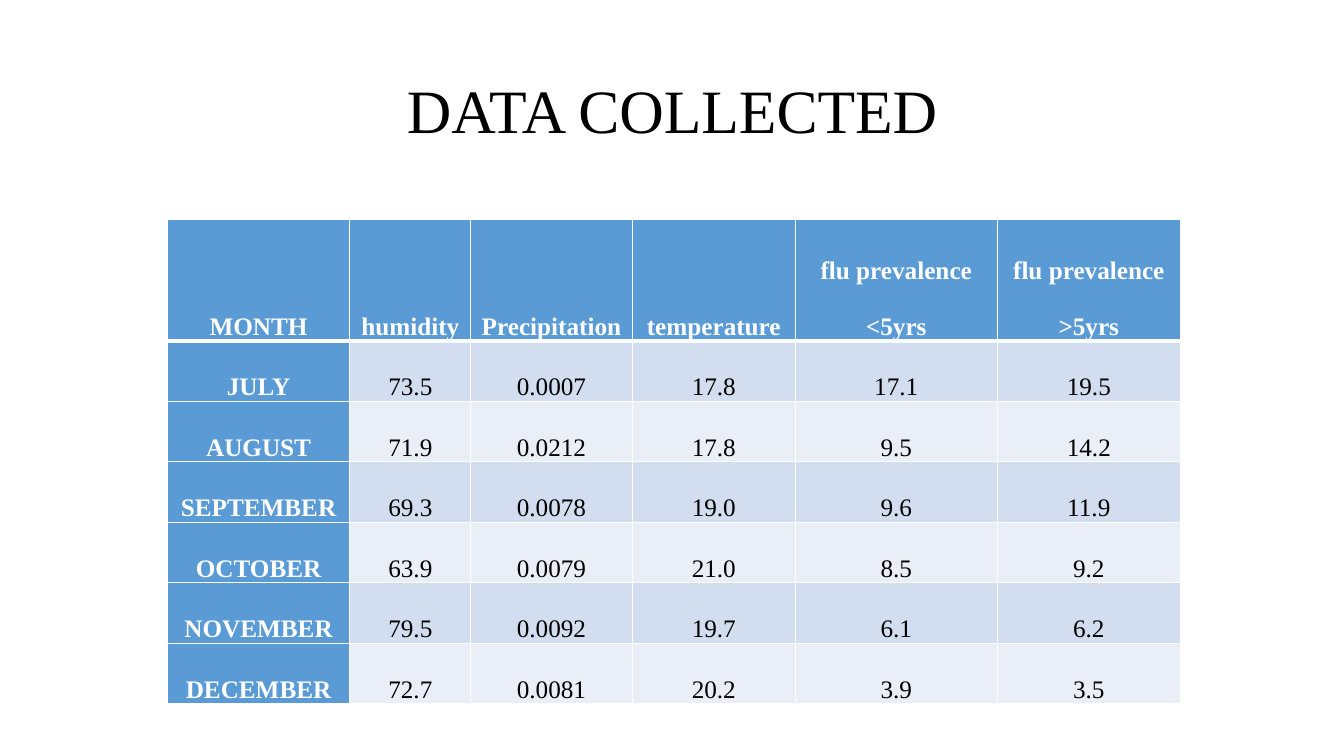
import pptx
import pptx.dml.color
import pptx.enum.text
import pptx.oxml.ns
import pptx.util
from lxml import etree
from pptx.util import Inches

COLORS = {
    "white": "FFFFFF",
    "black": "000000",
    "header": "5B9BD5",
    "odd_band": "D2DEEF",
    "even_band": "EAEFF7",
}
COLUMN_WIDTHS = [1.81, 1.2, 1.6, 1.62, 2, 1.82]
ROW_HEIGHTS = [1.2] + [0.6] * 6
FLU_DATA = [
    ["MONTH", "humidity", "Precipitation", "temperature",
     "flu prevalence <5yrs", "flu prevalence >5yrs"],
    ["JULY", "73.5", "0.0007", "17.8", "17.1", "19.5"],
    ["AUGUST", "71.9", "0.0212", "17.8", "9.5", "14.2"],
    ["SEPTEMBER", "69.3", "0.0078", "19.0", "9.6", "11.9"],
    ["OCTOBER", "63.9", "0.0079", "21.0", "8.5", "9.2"],
    ["NOVEMBER", "79.5", "0.0092", "19.7", "6.1", "6.2"],
    ["DECEMBER", "72.7", "0.0081", "20.2", "3.9", "3.5"],
]


class SlideBuilder:
    font_name = "Times New Roman"
    title_size = 44
    table_size = 18

    def __init__(self, presentation):
        self.slide = presentation.slides.add_slide(presentation.slide_layouts[5])

    def color(self, name):
        return pptx.dml.color.RGBColor.from_string(COLORS[name])

    def format_paragraph(self, paragraph, size, color, spacing, bold=False):
        paragraph.alignment = pptx.enum.text.PP_ALIGN.CENTER
        paragraph.line_spacing = spacing
        paragraph.font.name = self.font_name
        paragraph.font.size = pptx.util.Pt(size)
        paragraph.font.bold = bold
        paragraph.font.color.rgb = self.color(color)

    def add_title(self, text, left, top, width, height):
        title = self.slide.shapes.title
        title.left, title.top = Inches(left), Inches(top)
        title.width, title.height = Inches(width), Inches(height)
        title.text_frame.text = text
        title.text_frame.vertical_anchor = pptx.enum.text.MSO_ANCHOR.MIDDLE
        self.format_paragraph(title.text_frame.paragraphs[0],
                              self.title_size, "black", 0.9)

    def set_borders(self, cell, row):
        """Draw white borders, thicker below the header row."""
        properties = cell._tc.get_or_add_tcPr()
        widths = {"lnL": 1, "lnR": 1, "lnT": 3 if row == 1 else 1,
                  "lnB": 3 if row == 0 else 1}
        for tag, width in widths.items():
            line = etree.SubElement(properties, pptx.oxml.ns.qn(f"a:{tag}"),
                                    w=str(pptx.util.Pt(width)))
            fill = etree.SubElement(line, pptx.oxml.ns.qn("a:solidFill"))
            etree.SubElement(fill, pptx.oxml.ns.qn("a:srgbClr"), val=COLORS["white"])

    def format_cell(self, cell, row, column):
        is_header = row == 0 or column == 0
        band = "odd_band" if row % 2 else "even_band"
        self.set_borders(cell, row)
        cell.fill.solid()
        cell.fill.fore_color.rgb = self.color("header" if is_header else band)
        cell.margin_left = cell.margin_right = Inches(0.07)
        cell.margin_top = cell.margin_bottom = 0
        cell.vertical_anchor = pptx.enum.text.MSO_ANCHOR.BOTTOM
        self.format_paragraph(cell.text_frame.paragraphs[0], self.table_size,
                              "white" if is_header else "black", 2.0, is_header)

    def add_table(self, data, left, top, column_widths, row_heights):
        table = self.slide.shapes.add_table(
            len(data), len(data[0]), Inches(left), Inches(top),
            Inches(sum(column_widths)), Inches(sum(row_heights))).table
        table.first_col = True
        for column, width in zip(table.columns, column_widths):
            column.width = Inches(width)
        for row, height in zip(table.rows, row_heights):
            row.height = Inches(height)
        for row, values in enumerate(data):
            for column, value in enumerate(values):
                cell = table.cell(row, column)
                cell.text = value
                self.format_cell(cell, row, column)


def main():
    presentation = pptx.Presentation()
    presentation.slide_width = Inches(13.33)
    presentation.slide_height = Inches(7.5)
    builder = SlideBuilder(presentation)
    builder.add_title("DATA COLLECTED", 0.92, 0.4, 11.5, 1.45)
    builder.add_table(FLU_DATA, 1.66, 2.18, COLUMN_WIDTHS, ROW_HEIGHTS)
    presentation.save("out.pptx")


if __name__ == "__main__":
    main()
